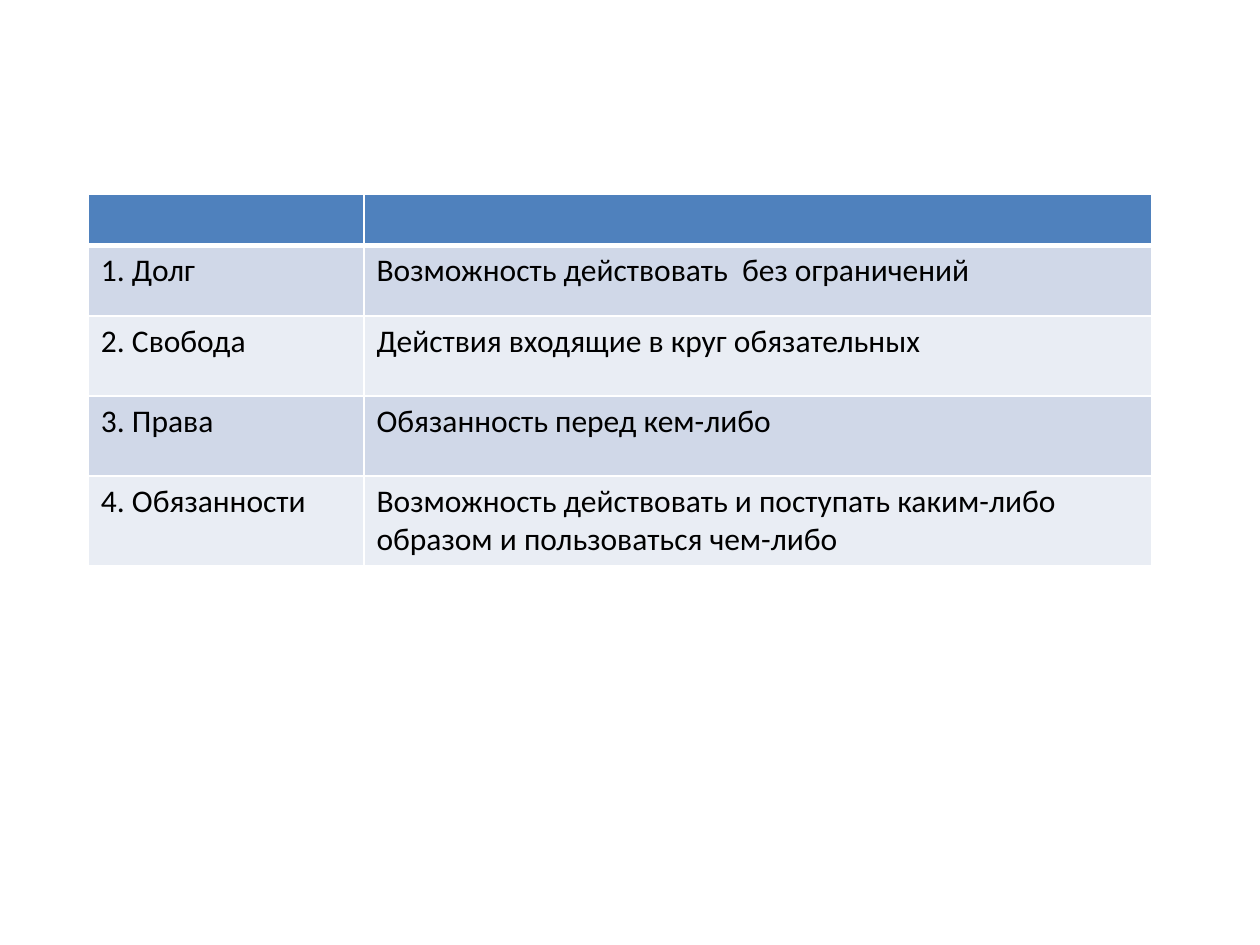
from pptx import Presentation as Deck
from pptx.dml.color import RGBColor as Color
from pptx.oxml import parse_xml as to_xml
from pptx.oxml.ns import nsdecls as spaces
from pptx.util import Pt

HUES = {
    "head": "4F81BD",
    "dark": "D0D8E8",
    "light": "E9EDF4",
    "line": "FFFFFF",
    "text": "000000",
}
ROWS = [
    ("", ""),
    ("1. Долг", "Возможность действовать  без ограничений"),
    ("2. Свобода", "Действия входящие в круг обязательных"),
    ("3. Права", "Обязанность перед кем-либо"),
    (
        "4. Обязанности",
        "Возможность действовать и поступать каким-либо образом и пользоваться чем-либо",
    ),
]
WIDTHS = [157.5, 450]
HEIGHTS = [26.6, 40.3, 45.8, 45.8, 45.8]


def write(frame, text, font="Calibri", size=18, hue="text"):
    run = frame.paragraphs[0].add_run()
    run.text = text
    run.font.name = font
    run.font.size = Pt(size)
    run.font.color.rgb = Color.from_string(HUES[hue])


class Page:
    """Holds the table style and the current slide."""

    def __init__(self, slide, thin=1, thick=3):
        self.slide = slide
        self.thin = thin
        self.thick = thick

    def edge(self, cell, side, width):
        cell._tc.get_or_add_tcPr().append(to_xml(
            f'<a:ln{side} {spaces("a")} w="{Pt(width)}"><a:solidFill>'
            f'<a:srgbClr val="{HUES["line"]}"/></a:solidFill></a:ln{side}>'
        ))

    def cell(self, cell, text, row):
        for side in "LRTB":
            rule = (row, side) in [(0, "B"), (1, "T")]
            self.edge(cell, side, self.thick if rule else self.thin)
        hue = "head" if row == 0 else ("light", "dark")[row % 2]
        cell.fill.solid()
        cell.fill.fore_color.rgb = Color.from_string(HUES[hue])
        if text:
            write(cell.text_frame, text)

    def table(self, left, top, rows, widths, heights):
        box = (left, top, sum(widths), sum(heights))
        grid = self.slide.shapes.add_table(
            len(rows), len(widths), *map(Pt, box)
        ).table
        grid.horz_banding = False
        for col, width in zip(grid.columns, widths):
            col.width = Pt(width)
        for num, (line, high) in enumerate(zip(rows, heights)):
            grid.rows[num].height = Pt(high)
            for col, text in enumerate(line):
                self.cell(grid.cell(num, col), text, num)


def main():
    deck = Deck()
    deck.slide_width = Pt(720)
    deck.slide_height = Pt(540)
    page = Page(deck.slides.add_slide(deck.slide_layouts[6]))
    page.table(50.5, 111, ROWS, WIDTHS, HEIGHTS)
    deck.save("out.pptx")


if __name__ == "__main__":
    main()
